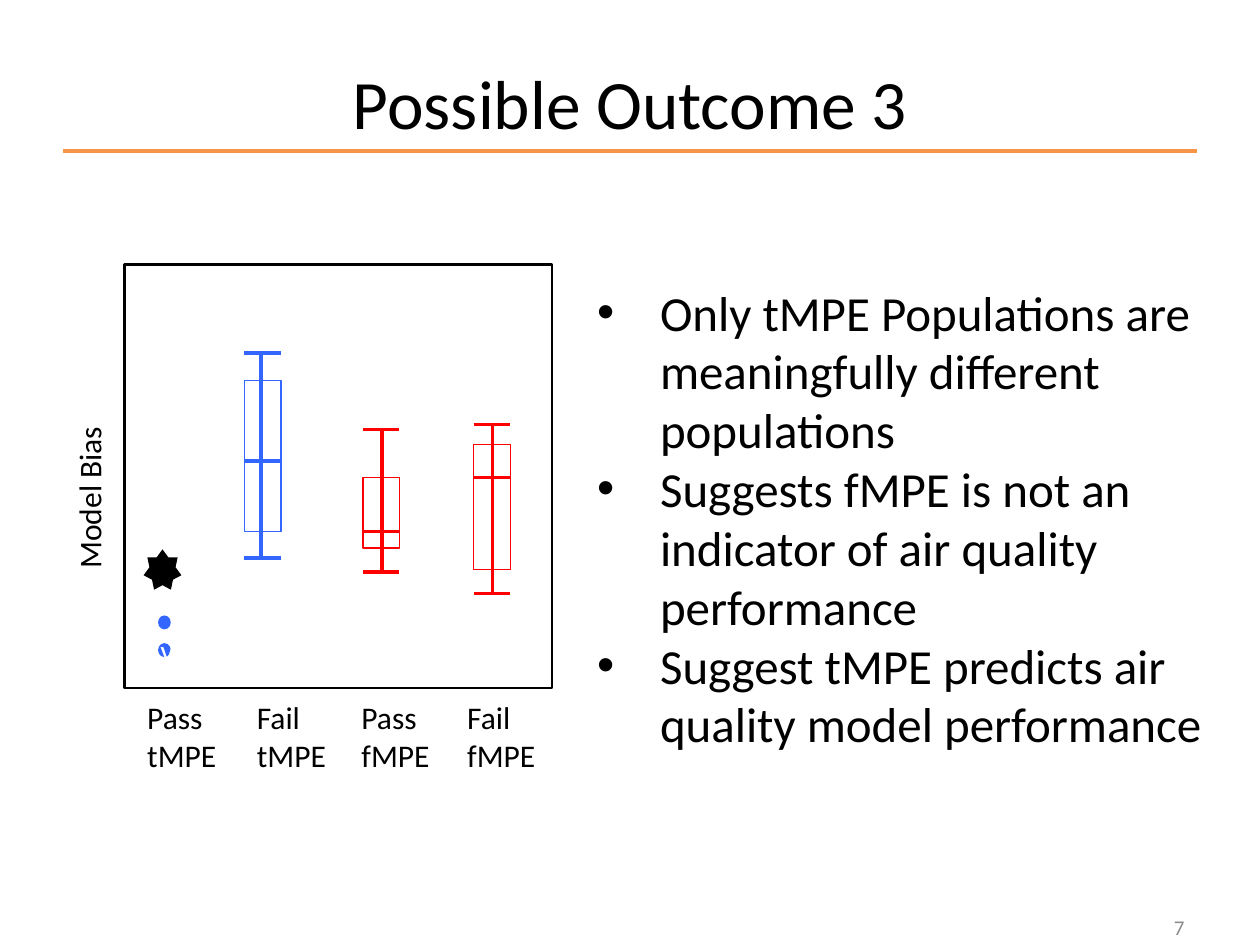
from lxml import etree
from pptx import Presentation
from pptx import util as u
from pptx.dml.color import RGBColor
from pptx.enum import shapes, text
from pptx.oxml.ns import qn

PX = 9144  # 100 px to the inch
FONT = "Calibri"
COLORS = {"ink": "000000", "rule": "F79646", "true": "3366FF",
          "false": "FF0000", "number": "8C8C8C", "paper": "FFFFFF"}
ALIGN = text.PP_ALIGN
SHAPE = shapes.MSO_SHAPE


def px(*lengths):
    return [u.Emu(length * PX) for length in lengths]


def color(name):
    return RGBColor.from_string(COLORS[name])


def write(shape, words, size, ink="ink", align=ALIGN.LEFT):
    """Put the words in a shape, one paragraph a line, and format the runs."""
    frame = shape.text_frame
    frame.text = words
    for para in frame.paragraphs:
        para.alignment = align
        for span in para.runs:
            span.font.size = u.Pt(size)
            span.font.name = FONT
            span.font.color.rgb = color(ink)
    return frame


def add_text(page, box, words, size, ink="ink", align=ALIGN.LEFT):
    shape = page.shapes.add_textbox(*px(*box))
    write(shape, words, size, ink, align).word_wrap = True
    return shape


def add_line(page, start, end, ink):
    line = page.shapes.add_connector(
        shapes.MSO_CONNECTOR.STRAIGHT, *px(*start, *end))
    line.line.color.rgb = color(ink)
    line.line.width = u.Pt(2)
    etree.SubElement(line._element.spPr, qn("a:effectLst"))


def add_shape(page, kind, box, fill=None, line=None, width=0.75):
    shape = page.shapes.add_shape(kind, *px(*box))
    shape.shadow.inherit = False
    if fill:
        shape.fill.solid()
        shape.fill.fore_color.rgb = color(fill)
    else:
        shape.fill.background()
    if line:
        shape.line.color.rgb = color(line)
        shape.line.width = u.Pt(width)
    else:
        shape.line.fill.background()
    return shape


def add_header(page, box):
    left, top, width, height = box
    add_line(page, (left, top + height + 1), (left + width, top + height + 1), "rule")
    title = page.shapes.title
    title.left, title.top, title.width, title.height = px(*box)
    frame = write(title, "Possible Outcome 3", 39.6, align=ALIGN.CENTER)
    frame.vertical_anchor = text.MSO_ANCHOR.MIDDLE


def add_box_plot(page, left, levels, ink, stem=15):
    """Draw one box with whiskers; levels run from the top cap to the bottom one."""
    high, upper, median, lower, low = levels
    width = 29
    add_shape(page, SHAPE.RECTANGLE, (left, upper, width, lower - upper), line=ink)
    add_line(page, (left + stem, high), (left + stem, low), ink)
    for level in (high, median, low):
        add_line(page, (left, level), (left + width, level), ink)


def add_plot(page, box):
    left, top, width, height = box

    # Box plots: offset, levels, colour, stem offset
    plots = [(95, (70, 92, 156, 212, 233), "true", 13),
             (189, (131, 169, 212, 225, 244), "false", 15),
             (277, (127, 143, 169, 242, 261), "false", 15)]
    for offset, levels, ink, stem in plots:
        add_box_plot(page, left + offset, [top + level for level in levels], ink, stem)

    # Single points and the star above them
    for offset, mark in ((301, "v"), (279, "")):
        dot = add_shape(page, SHAPE.OVAL, (left + 27, top + offset, 9, 10), "true", "true")
        if mark:
            frame = write(dot, mark, 18, "paper", ALIGN.CENTER)
            frame.vertical_anchor = text.MSO_ANCHOR.MIDDLE
    add_shape(page, SHAPE.STAR_7_POINT, (left + 15, top + 226, 30, 32), "ink")

    # Axis labels
    labels = [(8, 101, "Pass\ntMPE"), (95, 92, "Fail\ntMPE"),
              (178, 101, "Pass\nfMPE"), (262, 86, "Fail\nfMPE")]
    for offset, label_width, words in labels:
        add_text(page, (left + offset, top + height + 3, label_width, 71), words, 18)
    axis = add_text(page, (left - 155, top + 165, 253, 40), "Model Bias", 18,
                    align=ALIGN.CENTER)
    axis.rotation = 270

    # Frame
    add_shape(page, SHAPE.RECTANGLE, box, line="ink", width=1.5)


def add_findings(page, box):
    shape = add_text(page, box, "\n".join([
        "Only tMPE Populations are meaningfully different populations",
        "Suggests fMPE is not an indicator of air quality performance",
        "Suggest tMPE predicts air quality model performance"]), 28)
    indent = 50 * PX
    for para in shape.text_frame.paragraphs:
        properties = para._p.get_or_add_pPr()
        properties.set("marL", str(indent))
        properties.set("indent", str(-indent))
        etree.SubElement(properties, qn("a:buFont"), typeface="Arial")
        etree.SubElement(properties, qn("a:buChar"), char="•")


def add_page_number(page, box):
    shape = add_text(page, box, "7", 12, "number", ALIGN.RIGHT)
    shape.text_frame.vertical_anchor = text.MSO_ANCHOR.MIDDLE


def main():
    deck = Presentation()
    deck.slide_width, deck.slide_height = px(1000, 750)
    page = deck.slides.add_slide(deck.slide_layouts[5])
    add_header(page, (50, 42, 900, 77))
    add_page_number(page, (717, 721, 233, 29))
    add_plot(page, (99, 210, 339, 336))
    add_findings(page, (464, 219, 513, 387))
    deck.save("out.pptx")


if __name__ == "__main__":
    main()
